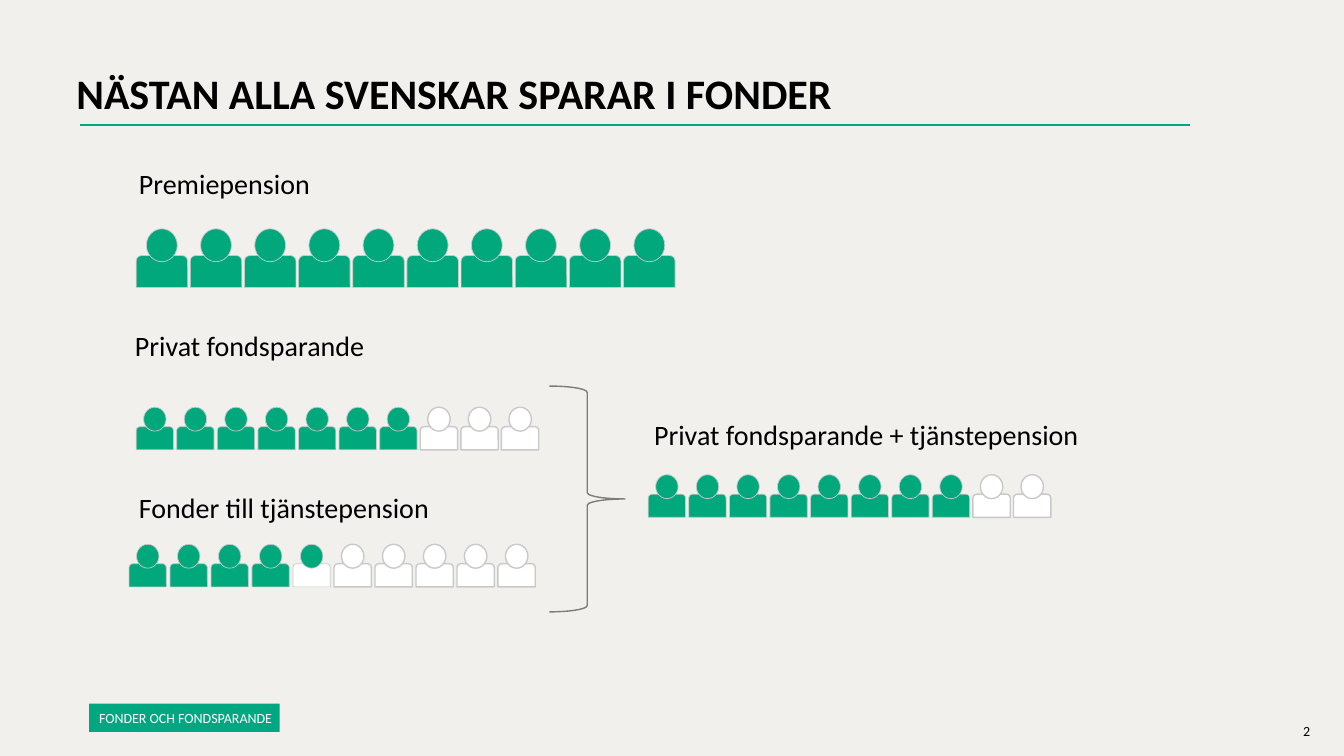
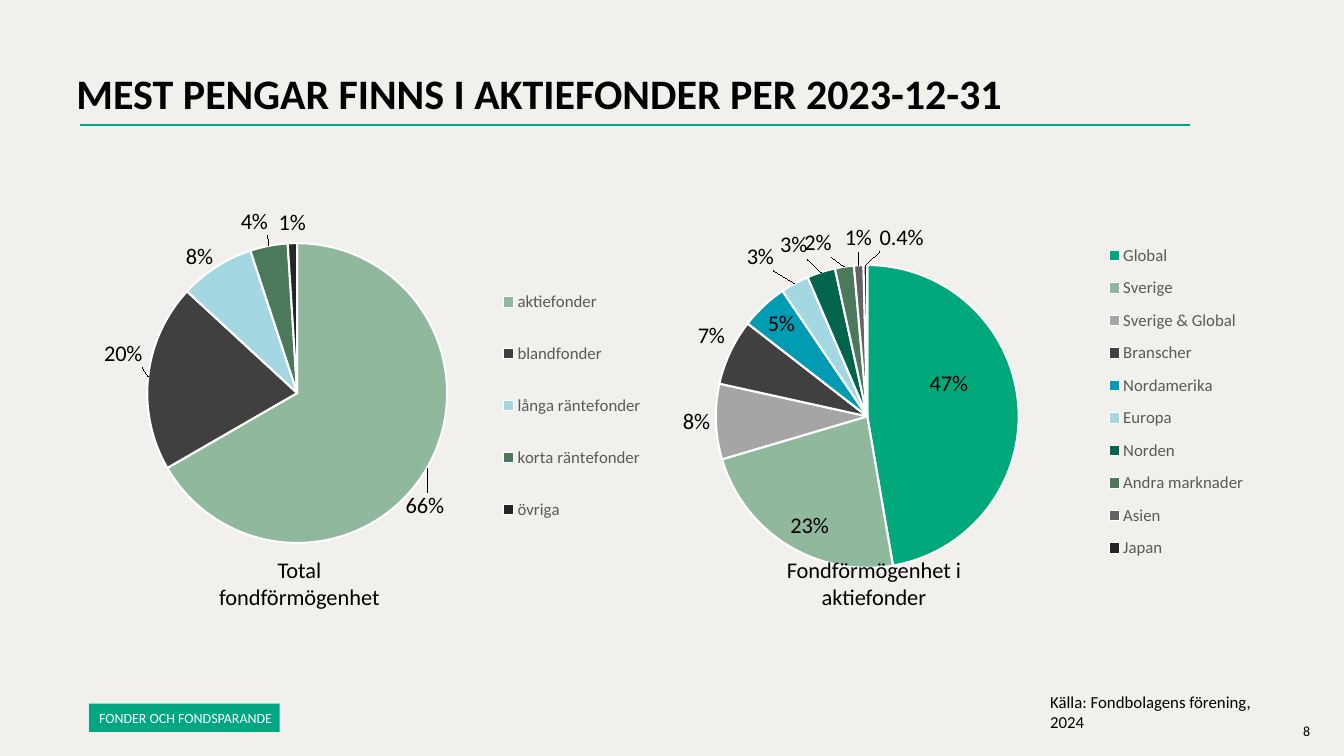
from lxml import etree
from pptx import Presentation
from pptx.chart.data import CategoryChartData
from pptx.dml.color import RGBColor
from pptx.enum.chart import XL_CHART_TYPE, XL_LABEL_POSITION, XL_LEGEND_POSITION
from pptx.enum.shapes import MSO_CONNECTOR, MSO_SHAPE
from pptx.enum.text import MSO_ANCHOR, PP_ALIGN
from pptx.oxml.ns import qn
from pptx.util import Inches, Pt

FONT = "Calibri"
COLORS = {
    "ground": "F1F0EC", "accent": "00A780", "person": "00A87C", "outline": "C9C9C9",
    "brace": "7C7C7C", "black": "000000", "white": "FFFFFF", "legend": "595959",
    "sage": "8FB89D", "silver": "A5A5A5", "charcoal": "404040", "teal": "009CB3",
    "sky": "A3D8E3", "forest": "00654A", "moss": "4C785B", "slate": "636363",
    "ink": "262626",
}
OUT, IN, MID = (XL_LABEL_POSITION.OUTSIDE_END, XL_LABEL_POSITION.INSIDE_END,
                XL_LABEL_POSITION.CENTER)

# All boxes are left, top, width, height in percent of the slide.
TITLE_BOX = (4.95, 9.07, 86.25, 19.33)
RULE = (5.93, 16.53, 88.58)
SECTION_BOX = (6.63, 93.07, 14.18, 3.73)
PAGE_BOX = (96.23, 94.93, 3, 3.6)
SECTION = "FONDER OCH FONDSPARANDE"

SAVERS_TITLE = "NÄSTAN ALLA SVENSKAR SPARAR I FONDER"
PEOPLE_PER_ROW = 10
SAVER_ROWS = [
    {"label": "Premiepension", "box": (9.6, 21.33, 24.2, 5.87),
     "start": (10.13, 30.27), "size": 3.83, "step": 4.03, "heads": 10, "bodies": 10},
    {"label": "Privat fondsparande", "box": (9.3, 42.8, 24.2, 5.87),
     "start": (10.13, 53.87), "size": 2.78, "step": 3.02, "heads": 7, "bodies": 7},
    {"label": "Fonder till tjänstepension", "box": (9.6, 64.27, 24.2, 5.87),
     "start": (9.6, 72), "size": 2.78, "step": 3.05, "heads": 5, "bodies": 4},
    {"label": "Privat fondsparande + tjänstepension", "box": (47.93, 54.53, 33.3, 5.87),
     "start": (48.23, 62.8), "size": 2.78, "step": 3.02, "heads": 8, "bodies": 8},
]
BRACE_BOX = (40.88, 51.07, 5.63, 29.87)

FUNDS_TITLE = "MEST PENGAR FINNS I AKTIEFONDER PER 2023-12-31"
PIES = [
    {"box": (48.3, 28.4, 45.08, 48.53), "plot": (0.11, 0.13, 0.5, 0.84),
     "legend": (0.75, 0.05, 0.24, 0.92),
     "caption": ("Fondförmögenhet i", "aktiefonder"),
     "caption_box": (45.3, 72.93, 39.45, 8.53),
     "slices": [
         ("Global", 0.47, "person", MID, 0.01, -0.07),
         ("Sverige", 0.23, "sage", IN, 0, 0),
         ("Sverige & Global", 0.08, "silver", OUT, 0, 0),
         ("Branscher", 0.07, "charcoal", OUT, 0, 0),
         ("Nordamerika", 0.05, "teal", IN, 0, 0),
         ("Europa", 0.03, "sky", OUT, -0.03, -0.02),
         ("Norden", 0.03, "forest", OUT, -0.02, -0.02),
         ("Andra marknader", 0.02, "moss", OUT, -0.02, -0.01),
         ("Asien", 0.01, "slate", OUT, 0, -0.02),
         ("Japan", 0.004, "ink", OUT, 0.06, -0.02),
     ]},
    {"box": (0.68, 22.67, 49.28, 55.87), "plot": (0.2, 0.17, 0.47, 0.71),
     "legend": (0.72, 0.21, 0.26, 0.69),
     "caption": ("Total", "fondförmögenhet"),
     "caption_box": (6.68, 72.93, 31.2, 8.53),
     "slices": [
         ("aktiefonder", 0.66, "sage", OUT, -0.04, 0.05),
         ("blandfonder", 0.2, "charcoal", OUT, 0, -0.02),
         ("långa räntefonder", 0.08, "sky", OUT, 0, 0.02),
         ("korta räntefonder", 0.04, "moss", OUT, 0, -0.01),
         ("övriga", 0.01, "ink", OUT, 0, 0),
     ]},
]
SOURCE = "Källa: Fondbolagens förening, 2024"
SOURCE_BOX = (77.4, 90.8, 19.2, 4)

prs = Presentation()
prs.slide_width, prs.slide_height = Inches(13.33), Inches(7.5)


def across(share):
    return round(prs.slide_width * share / 100)


def down(share):
    return round(prs.slide_height * share / 100)


def place(box):
    left, top, width, height = box
    return across(left), down(top), across(width), down(height)


def color(name):
    return RGBColor.from_string(COLORS[name])


def style_font(font, size, tone="black", bold=False):
    for key, value in {"name": FONT, "size": Pt(size), "bold": bold}.items():
        setattr(font, key, value)
    font.color.rgb = color(tone)


def paint(shape, fill, line=None, weight=1):
    shape.shadow.inherit = False
    if fill:
        shape.fill.solid()
        shape.fill.fore_color.rgb = color(fill)
    else:
        shape.fill.background()
    if line:
        shape.line.color.rgb = color(line)
        shape.line.width = Pt(weight)
    else:
        shape.line.fill.background()


def write(slide, box, lines, size, bold=False, align=PP_ALIGN.LEFT, spacing=None):
    frame = slide.shapes.add_textbox(*place(box)).text_frame
    frame.word_wrap = True
    paragraph = frame.paragraphs[0]
    paragraph.alignment = align
    paragraph.line_spacing = spacing
    for index, line in enumerate(lines):
        if index:
            paragraph.add_line_break()
        run = paragraph.add_run()
        run.text = line
        style_font(run.font, size, bold=bold)


def new_slide(title, page):
    slide = prs.slides.add_slide(prs.slide_layouts[6])
    slide.background.fill.solid()
    slide.background.fill.fore_color.rgb = color("ground")
    write(slide, PAGE_BOX, [page], 10)
    left, top, right = RULE
    rule = slide.shapes.add_connector(
        MSO_CONNECTOR.STRAIGHT, across(left), down(top), across(right), down(top))
    rule.line.color.rgb = color("accent")
    rule.line.width = Pt(1.5)
    etree.SubElement(rule.element.spPr, qn("a:effectLst"))
    write(slide, TITLE_BOX, [title], 30, bold=True, spacing=0.9)
    section = slide.shapes.add_shape(MSO_SHAPE.RECTANGLE, *place(SECTION_BOX))
    paint(section, "accent")
    frame = section.text_frame
    margins = {"margin_left": 0.1, "margin_top": 0.08,
               "margin_right": 0.04, "margin_bottom": 0.05}
    for key, value in margins.items():
        setattr(frame, key, Inches(value))
    frame.word_wrap = False
    frame.vertical_anchor = MSO_ANCHOR.MIDDLE
    paragraph = frame.paragraphs[0]
    paragraph.alignment = PP_ALIGN.LEFT
    paragraph.line_spacing = 0.9
    run = paragraph.add_run()
    run.text = SECTION
    style_font(run.font, 10, "white")
    return slide


def add_people(slide, row):
    people = slide.shapes.add_group_shape().shapes
    start, top = row["start"]
    size = across(row["size"])
    parts = [
        (MSO_SHAPE.ROUND_2_SAME_RECTANGLE, "bodies", 0, 0.52, 1, 0.62),
        (MSO_SHAPE.OVAL, "heads", 0.2, 0, 0.6, 0.64),
    ]
    for index in range(PEOPLE_PER_ROW):
        left = across(start + index * row["step"])
        weight = 0.5 if index < row["heads"] else 1
        for kind, count, dx, dy, width, height in parts:
            part = people.add_shape(
                kind, left + round(dx * size), down(top) + round(dy * size),
                round(width * size), round(height * size))
            paint(part, "person" if index < row[count] else "white", "outline", weight)


def manual_layout(values, inner=False, offset=False):
    layout = etree.Element(qn("c:layout"))
    manual = etree.SubElement(layout, qn("c:manualLayout"))
    settings = [("layoutTarget", "inner")] if inner else []
    if not offset:
        settings += [("xMode", "edge"), ("yMode", "edge")]
    settings += zip("xywh", values)
    for tag, value in settings:
        etree.SubElement(manual, qn(f"c:{tag}")).set("val", str(value))
    return layout


def replace_layout(parent, layout, position):
    for old in parent.findall(qn("c:layout")):
        parent.remove(old)
    parent.insert(position, layout)


def add_pie(slide, pie):
    data = CategoryChartData(number_format="0%")
    data.categories = [entry[0] for entry in pie["slices"]]
    data.add_series("Series 1", [entry[1] for entry in pie["slices"]])
    chart = slide.shapes.add_chart(XL_CHART_TYPE.PIE, *place(pie["box"]), data).chart
    chart.has_title = False
    style_font(chart.font, 10)
    chart.has_legend = True
    legend = chart.legend
    legend.position = XL_LEGEND_POSITION.RIGHT
    legend.include_in_layout = False
    style_font(legend.font, 12, "legend")
    plot = chart.plots[0]
    plot.vary_by_categories = True
    series = plot.series[0]
    labels = series.data_labels
    for key, value in {"show_value": True, "number_format": "0%",
                       "number_format_is_linked": False, "position": OUT}.items():
        setattr(labels, key, value)
    style_font(labels.font, 16)
    for index, (_, _, tone, position, _, _) in enumerate(pie["slices"]):
        point = series.points[index]
        point.format.fill.solid()
        point.format.fill.fore_color.rgb = color(tone)
        point.format.line.color.rgb = color("white")
        point.format.line.width = Pt(1.5)
        style_font(point.data_label.font, 16)
        point.data_label.position = position
    root = chart.element
    for label, entry in zip(root.iter(qn("c:dLbl")), pie["slices"]):
        number = etree.Element(qn("c:numFmt"))
        number.set("formatCode", "0%" if entry[1] >= 0.01 else "0.0%")
        number.set("sourceLinked", "0")
        label.insert(1, number)
        if any(entry[4:]):
            label.insert(1, manual_layout(entry[4:], offset=True))
    replace_layout(next(root.iter(qn("c:plotArea"))),
                   manual_layout(pie["plot"], inner=True), 0)
    replace_layout(next(root.iter(qn("c:legend"))), manual_layout(pie["legend"]), 1)


def build_savers():
    slide = new_slide(SAVERS_TITLE, "2")
    for row in SAVER_ROWS:
        write(slide, row["box"], [row["label"]], 20)
        add_people(slide, row)
    brace = slide.shapes.add_shape(MSO_SHAPE.RIGHT_BRACE, *place(BRACE_BOX))
    paint(brace, None, "brace")


def build_funds():
    slide = new_slide(FUNDS_TITLE, "8")
    for pie in PIES:
        add_pie(slide, pie)
    for pie in PIES:
        write(slide, pie["caption_box"], pie["caption"], 16, align=PP_ALIGN.CENTER)
    write(slide, SOURCE_BOX, [SOURCE], 12)


def main():
    build_savers()
    build_funds()
    prs.save("out.pptx")


if __name__ == "__main__":
    main()
